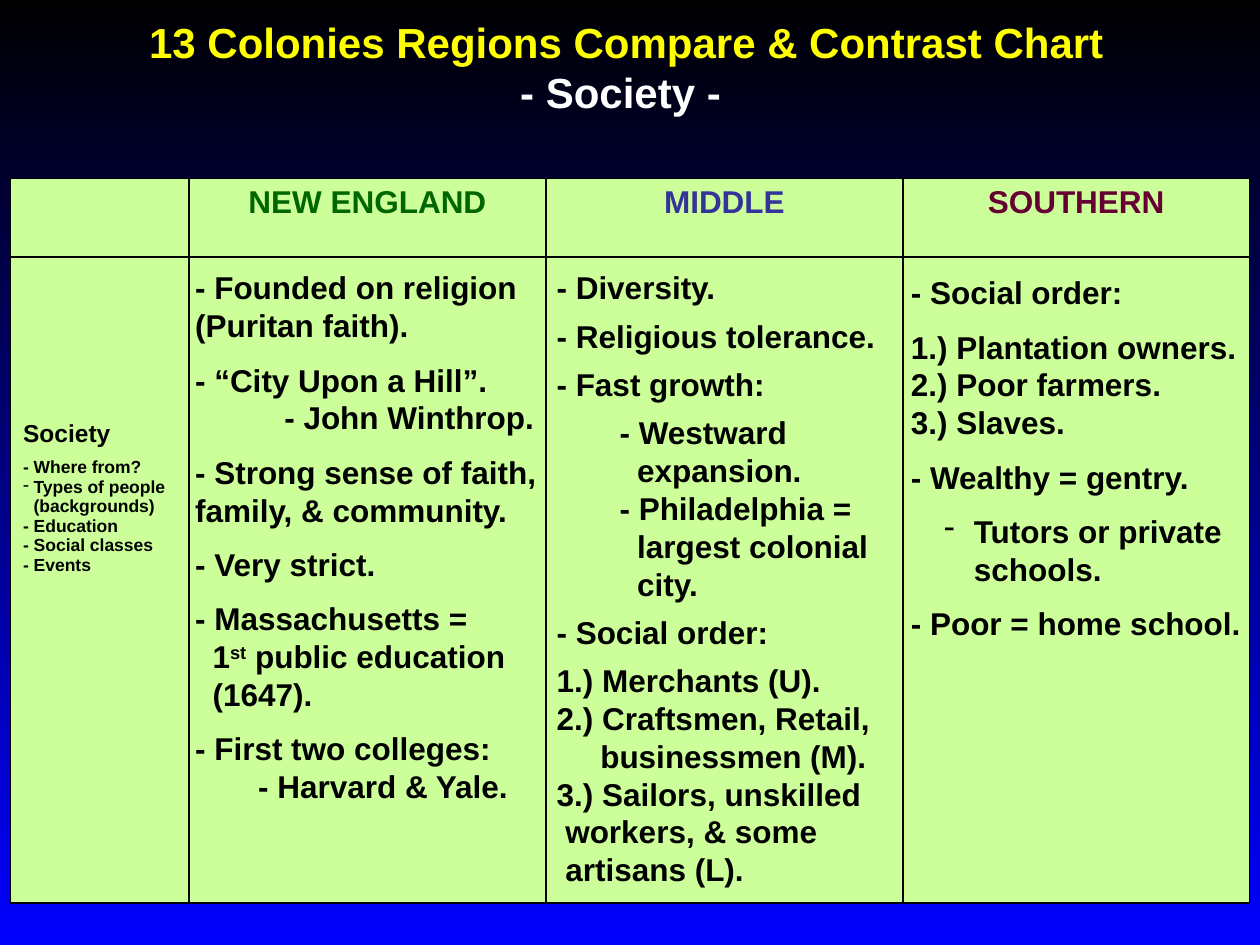
from dataclasses import dataclass

from lxml import etree
from pptx import Presentation
from pptx import util as u
from pptx.dml.color import RGBColor
from pptx.enum import text as t
from pptx.oxml import ns

BLACK = RGBColor(0x00, 0x00, 0x00)
BLUE = RGBColor(0x00, 0x00, 0xFF)
YELLOW = RGBColor(0xFF, 0xFF, 0x00)
WHITE = RGBColor(0xFF, 0xFF, 0xFF)
PALE_GREEN = RGBColor(0xCC, 0xFF, 0x99)
DARK_GREEN = RGBColor(0x00, 0x66, 0x00)
INDIGO = RGBColor(0x33, 0x33, 0x99)
MAROON = RGBColor(0x66, 0x00, 0x33)

FONT = "Arial"
WIDE_GAP = 9.5
NARROW_GAP = 6
LEVEL = 36


@dataclass(frozen=True)
class Line:
    text: str
    gap: float = 0
    left: float = 0
    bullet_hang: float = 0
    size: float = 18
    color: RGBColor = BLACK
    superscript: str = ""
    rest: str = ""
    centered: bool = False


@dataclass(frozen=True)
class Block:
    left: float
    top: float
    width: float
    height: float
    lines: tuple[Line, ...]


TITLE = Block(67, 5.8, 581.8, 64.8, (
    Line("13 Colonies Regions Compare & Contrast Chart", size=24, color=YELLOW, centered=True),
    Line("- Society - ", size=24, color=WHITE, centered=True),
))

NEW_ENGLAND = Block(104.4, 149.8, 209.5, 336.2, (
    Line("- Founded on religion"),
    Line("(Puritan faith)."),
    Line("- “City Upon a Hill”.", WIDE_GAP),
    Line("- John Winthrop.", left=LEVEL + 15),
    Line("- Strong sense of faith,", WIDE_GAP),
    Line("family, & community."),
    Line("- Very strict.", WIDE_GAP),
    Line("- Massachusetts =", WIDE_GAP),
    Line("1", left=10, superscript="st", rest=" public education"),
    Line("(1647).", left=10),
    Line("- First two colleges:", WIDE_GAP),
    Line("- Harvard & Yale.", left=LEVEL),
))

MIDDLE = Block(311, 149.8, 196.6, 361.4, (
    Line("- Diversity."),
    Line("- Religious tolerance.", NARROW_GAP),
    Line("- Fast growth:", NARROW_GAP),
    Line("- Westward", NARROW_GAP, LEVEL),
    Line("expansion.", left=LEVEL + 10),
    Line("- Philadelphia =", left=LEVEL),
    Line("largest colonial", left=LEVEL + 10),
    Line("city.", left=LEVEL + 10),
    Line("- Social order:", NARROW_GAP),
    Line("1.) Merchants (U).", NARROW_GAP),
    Line("2.) Craftsmen, Retail,"),
    Line("businessmen (M).", left=25),
    Line("3.) Sailors, unskilled"),
    Line("workers, & some", left=5),
    Line("artisans (L).", left=5),
))

SOUTHERN = Block(513.4, 152.6, 205.2, 240.5, (
    Line("- Social order:"),
    Line("1.) Plantation owners.", WIDE_GAP),
    Line("2.) Poor farmers."),
    Line("3.) Slaves."),
    Line("- Wealthy = gentry.", WIDE_GAP),
    Line("Tutors or private", WIDE_GAP, LEVEL, bullet_hang=17),
    Line("schools.", left=LEVEL),
    Line("- Poor = home school.", WIDE_GAP),
))

HEADERS = (
    Line("NEW ENGLAND", color=DARK_GREEN, centered=True),
    Line("MIDDLE", color=INDIGO, centered=True),
    Line("SOUTHERN", color=MAROON, centered=True),
)

TOPICS = (
    Line("Society", size=14),
    Line("- Where from?", NARROW_GAP, size=10),
    Line("Types of people", left=6, bullet_hang=6, size=10),
    Line("(backgrounds)", left=6, size=10),
    Line("- Education", size=10),
    Line("- Social classes", size=10),
    Line("- Events", size=10),
)

COLUMN_WIDTHS = (102, 204, 204, 198)
ROW_HEIGHTS = (45, 369)


def add_text(paragraph, text: str, *, size: float, color: RGBColor,
             bold: bool = True, superscript: bool = False) -> None:
    run = paragraph.add_run()
    run.text = text
    run.font.name = FONT
    run.font.size = u.Pt(size)
    run.font.bold = bold
    run.font.color.rgb = color
    if superscript:
        run._r.get_or_add_rPr().set("baseline", "30000")


def write_lines(frame, lines: tuple[Line, ...]) -> None:
    for index, line in enumerate(lines):
        paragraph = frame.add_paragraph() if index else frame.paragraphs[0]
        paragraph.alignment = t.PP_ALIGN.CENTER if line.centered else t.PP_ALIGN.LEFT
        paragraph.space_before = u.Pt(line.gap)
        properties = paragraph._p.get_or_add_pPr()
        properties.set("marL", str(u.Pt(line.left)))
        properties.set("indent", str(-u.Pt(line.bullet_hang)))
        if line.bullet_hang:
            etree.SubElement(properties, ns.qn("a:buChar")).set("char", "-")
        for part in (line.text, line.superscript, line.rest):
            if part:
                add_text(paragraph, part, size=line.size, color=line.color,
                         superscript=part == line.superscript)


def add_block(slide, block: Block, wrap: bool = False) -> None:
    shape = slide.shapes.add_textbox(u.Pt(block.left), u.Pt(block.top),
                                     u.Pt(block.width), u.Pt(block.height))
    shape.text_frame.word_wrap = wrap
    write_lines(shape.text_frame, block.lines)


def style_cell(cell) -> None:
    cell.fill.solid()
    cell.fill.fore_color.rgb = PALE_GREEN
    properties = cell._tc.get_or_add_tcPr()
    for index, side in enumerate(("a:lnL", "a:lnR", "a:lnT", "a:lnB")):
        border = etree.Element(ns.qn(side), w=str(u.Pt(1)))
        fill = etree.SubElement(border, ns.qn("a:solidFill"))
        etree.SubElement(fill, ns.qn("a:srgbClr")).set("val", str(BLACK))
        properties.insert(index, border)


def add_region_table(slide) -> None:
    table = slide.shapes.add_table(
        len(ROW_HEIGHTS), len(COLUMN_WIDTHS), u.Pt(6), u.Pt(102),
        u.Pt(sum(COLUMN_WIDTHS)), u.Pt(sum(ROW_HEIGHTS))).table
    table.first_row = False
    table.horz_banding = False
    for column, width in zip(table.columns, COLUMN_WIDTHS):
        column.width = u.Pt(width)
    for row, height in zip(table.rows, ROW_HEIGHTS):
        row.height = u.Pt(height)
    for cell in table.iter_cells():
        style_cell(cell)
    for column_index, header in enumerate(HEADERS, start=1):
        write_lines(table.cell(0, column_index).text_frame, (header,))
    topic_cell = table.cell(1, 0)
    topic_cell.margin_top = u.Pt(93)
    write_lines(topic_cell.text_frame, TOPICS)


def paint_background(slide) -> None:
    fill = slide.background.fill
    fill.gradient()
    fill.gradient_angle = 270
    for stop, color in zip(fill.gradient_stops, (BLACK, BLUE)):
        stop.color.rgb = color


def main() -> None:
    presentation = Presentation()
    presentation.slide_width = u.Pt(720)
    presentation.slide_height = u.Pt(540)
    slide = presentation.slides.add_slide(presentation.slide_layouts[6])
    paint_background(slide)
    add_block(slide, TITLE, wrap=True)
    add_region_table(slide)
    for block in (NEW_ENGLAND, MIDDLE, SOUTHERN):
        add_block(slide, block)
    presentation.save("out.pptx")


if __name__ == "__main__":
    main()
